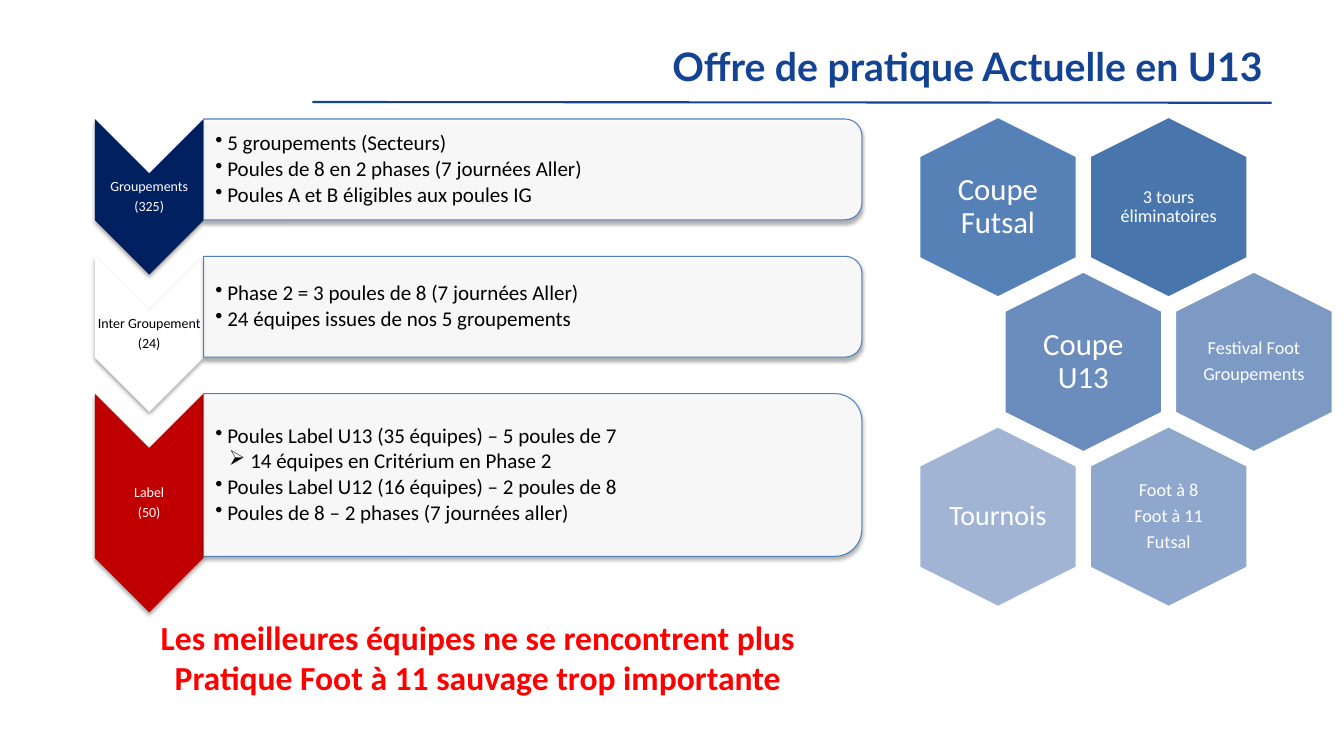
from dataclasses import dataclass

from lxml import etree
from pptx import Presentation
from pptx.dml.color import RGBColor
from pptx.enum.shapes import MSO_CONNECTOR, MSO_SHAPE
from pptx.enum.text import MSO_ANCHOR, MSO_AUTO_SIZE, PP_ALIGN
from pptx.oxml.ns import qn
from pptx.shapes.autoshape import Shape
from pptx.shapes.shapetree import GroupShapes
from pptx.slide import Slide
from pptx.util import Cm, Pt

CHEVRON = MSO_SHAPE.CHEVRON
PANEL = MSO_SHAPE.ROUND_2_SAME_RECTANGLE
HEXAGON = MSO_SHAPE.HEXAGON
STRAIGHT = MSO_CONNECTOR.STRAIGHT
MIDDLE, BOTTOM, TOP = MSO_ANCHOR.MIDDLE, MSO_ANCHOR.BOTTOM, MSO_ANCHOR.TOP
LEFT, CENTER, RIGHT = PP_ALIGN.LEFT, PP_ALIGN.CENTER, PP_ALIGN.RIGHT
FIT_TEXT = MSO_AUTO_SIZE.SHAPE_TO_FIT_TEXT


@dataclass(frozen=True)
class Theme:
    title_font: str = "Lato"
    body_font: str = "Calibri"
    title_blue: str = "134392"
    navy: str = "002060"
    red: str = "C00000"
    alert: str = "FF0000"
    white: str = "FFFFFF"
    black: str = "000000"
    panel_line: str = "4F81BD"
    title_size: int = 28
    alert_size: int = 24
    heading_size: int = 22
    tournament_size: int = 20
    list_size: int = 15
    detail_size: int = 13
    label_size: int = 10


THEME = Theme()


@dataclass(frozen=True)
class Box:
    left: float
    top: float
    width: float
    height: float


@dataclass(frozen=True)
class TextStyle:
    size: int
    color: str
    font: str = THEME.body_font
    bold: bool = False
    align: PP_ALIGN = CENTER
    anchor: MSO_ANCHOR = MIDDLE
    left_inset: float = 0
    inset: float = 0
    line_spacing: float = 0.9
    after_ratio: float = 0.35


@dataclass(frozen=True)
class Bullet:
    text: str
    symbol: str = "•"
    level: int = 1
    indent: float = 0.3


@dataclass(frozen=True)
class Stage:
    label: tuple[str, ...]
    fill: str
    label_color: str
    arrow_length: float
    panel_height: float
    bullets: tuple[Bullet, ...]


@dataclass(frozen=True)
class Cell:
    column: float
    row: int
    fill: str
    size: int
    lines: tuple[str, ...]


STAGES = (
    Stage(("Groupements", "(325)"), THEME.navy, THEME.white, 3.92, 2.54, (
        Bullet("5 groupements (Secteurs)"),
        Bullet("Poules de 8 en 2 phases (7 journées Aller)"),
        Bullet("Poules A et B éligibles aux poules IG"))),
    Stage(("Inter Groupement", "(24)"), THEME.white, THEME.black, 3.92, 2.54, (
        Bullet("Phase 2 = 3 poules de 8 (7 journées Aller)"),
        Bullet("24 équipes issues de nos 5 groupements"))),
    Stage(("Label", "(50)"), THEME.red, THEME.white, 5.51, 4.1, (
        Bullet("Poules Label U13 (35 équipes) – 5 poules de 7"),
        Bullet(" 14 équipes en Critérium en Phase 2", "➢", 2, 0.64),
        Bullet("Poules Label U12 (16 équipes) – 2 poules de 8"),
        Bullet("Poules de 8 – 2 phases (7 journées aller)"))),
)
CELLS = (
    Cell(1, 0, "4875AC", THEME.detail_size, ("3 tours éliminatoires",)),
    Cell(0, 0, "5681B7", THEME.heading_size, ("Coupe Futsal",)),
    Cell(0.5, 1, "6A8DBE", THEME.heading_size, ("Coupe U13",)),
    Cell(1.5, 1, "7D9AC5", THEME.detail_size, ("Festival Foot", "Groupements")),
    Cell(1, 2, "8FA7CC", THEME.detail_size, ("Foot à 8", "Foot à 11", "Futsal")),
    Cell(0, 2, "A2B4D4", THEME.tournament_size, ("Tournois",)),
)
ARROW_LEFT, ARROW_WIDTH = 2.39, 2.74
PANEL_WIDTH = 16.59
STAGE_TOP, STAGE_STEP = 3.0, 3.46
CORNER_INSET = 0.0488
HEXAGON_WIDTH, HEXAGON_HEIGHT = 3.99, 4.57


def add_text(shapes: GroupShapes, box: Box, lines: tuple, style: TextStyle) -> Shape:
    shape = shapes.add_textbox(Cm(box.left), Cm(box.top), Cm(box.width), Cm(box.height))
    frame = shape.text_frame
    frame.word_wrap = True
    frame.vertical_anchor = style.anchor
    frame.margin_left = Cm(style.left_inset)
    frame.margin_right = Cm(style.inset)
    frame.margin_top = frame.margin_bottom = Cm(style.inset / 2)
    for index, line in enumerate(lines):
        paragraph = frame.add_paragraph() if index else frame.paragraphs[0]
        paragraph.alignment = style.align
        paragraph.line_spacing = style.line_spacing
        paragraph.space_after = Pt(style.size * style.after_ratio)
        bulleted = isinstance(line, Bullet)
        if bulleted:
            paragraph.level = line.level
            properties = paragraph._p.get_or_add_pPr()
            properties.set("marL", str(Cm(line.indent)))
            properties.set("indent", str(Cm(-0.3)))
            etree.SubElement(properties, qn("a:buChar"), char=line.symbol)
        run = paragraph.add_run()
        run.text = line.text if bulleted else line
        run.font.name = style.font
        run.font.size = Pt(style.size)
        run.font.bold = style.bold
        run.font.color.rgb = RGBColor.from_string(style.color)
    return shape


def add_turned(shapes: GroupShapes, kind: MSO_SHAPE, box: Box, fill: str) -> Shape:
    left = box.left + (box.width - box.height) / 2
    top = box.top + (box.height - box.width) / 2
    shape = shapes.add_shape(kind, Cm(left), Cm(top), Cm(box.height), Cm(box.width))
    shape.rotation = 90
    shape.shadow.inherit = False
    shape.fill.solid()
    shape.fill.fore_color.rgb = RGBColor.from_string(fill)
    shape.line.fill.background()
    return shape


def set_line(shape: Shape, color: str, width: float) -> None:
    shape.line.color.rgb = RGBColor.from_string(color)
    shape.line.width = Pt(width)


def add_shadow(shape: Shape) -> None:
    effects = shape._element.spPr.find(qn("a:effectLst"))
    shadow = etree.SubElement(effects, qn("a:outerShdw"), blurRad=str(Pt(3.1)),
                              dist=str(Pt(1.8)), dir="5400000", rotWithShape="0")
    color = etree.SubElement(shadow, qn("a:srgbClr"), val=THEME.black)
    etree.SubElement(color, qn("a:alpha"), val="35000")


def add_stage(shapes: GroupShapes, stage: Stage, top: float) -> None:
    arrow = add_turned(shapes, CHEVRON, Box(ARROW_LEFT, top, ARROW_WIDTH, stage.arrow_length), stage.fill)
    add_shadow(arrow)
    label_box = Box(ARROW_LEFT, top + ARROW_WIDTH / 2, ARROW_WIDTH, stage.arrow_length - ARROW_WIDTH)
    add_text(shapes, label_box, stage.label, TextStyle(THEME.label_size, stage.label_color))
    panel_left = ARROW_LEFT + ARROW_WIDTH
    panel = add_turned(shapes, PANEL, Box(panel_left, top, PANEL_WIDTH, stage.panel_height), THEME.white)
    set_line(panel, THEME.panel_line, 0.75)
    color = panel._element.spPr.find(qn("a:solidFill"))[0]
    etree.SubElement(color, qn("a:alpha"), val="90000")
    add_shadow(panel)
    inset = CORNER_INSET * stage.panel_height
    text_box = Box(panel_left, top + inset, PANEL_WIDTH - inset, stage.panel_height - 2 * inset)
    add_text(shapes, text_box, stage.bullets,
             TextStyle(THEME.list_size, THEME.black, align=LEFT, left_inset=0.3, after_ratio=0.15))


def add_cell(shapes: GroupShapes, cell: Cell) -> None:
    center, middle = 25.15 + 4.3 * cell.column, 5.22 + 3.9 * cell.row
    box = Box(center - HEXAGON_WIDTH / 2, middle - HEXAGON_HEIGHT / 2, HEXAGON_WIDTH, HEXAGON_HEIGHT)
    set_line(add_turned(shapes, HEXAGON, box, cell.fill), THEME.white, 2)
    add_text(shapes, Box(center - 1.37, middle - 1.57, 2.74, 3.14), cell.lines,
             TextStyle(cell.size, THEME.white))


def add_title(slide: Slide) -> None:
    rule = slide.shapes.add_connector(STRAIGHT, Cm(7.87), Cm(2.57), Cm(32.05), Cm(2.59))
    set_line(rule, THEME.title_blue, 1.5)
    etree.SubElement(rule._element.spPr, qn("a:effectLst"))
    add_text(slide.shapes, Box(7.52, 0, 24.54, 2.39), ("Offre de pratique Actuelle en U13",),
             TextStyle(THEME.title_size, THEME.title_blue, THEME.title_font, True, RIGHT, BOTTOM,
                       0.25, 0.25, 1, 0))


def main() -> None:
    presentation = Presentation()
    presentation.slide_width, presentation.slide_height = Cm(33.87), Cm(19.05)
    slide = presentation.slides.add_slide(presentation.slide_layouts[6])
    add_title(slide)
    stages = slide.shapes.add_group_shape().shapes
    for index, stage in enumerate(STAGES):
        add_stage(stages, stage, STAGE_TOP + index * STAGE_STEP)
    cells = slide.shapes.add_group_shape().shapes
    for cell in CELLS:
        add_cell(cells, cell)
    alert = add_text(slide.shapes, Box(3.58, 15.42, 16.92, 2.31),
                     ("Les meilleures équipes ne se rencontrent plus",
                      "Pratique Foot à 11 sauvage trop importante"),
                     TextStyle(THEME.alert_size, THEME.alert, bold=True, anchor=TOP, left_inset=0.25,
                               inset=0.25, line_spacing=1, after_ratio=0))
    alert.text_frame.word_wrap = False
    alert.text_frame.auto_size = FIT_TEXT
    presentation.save("out.pptx")


if __name__ == "__main__":
    main()
